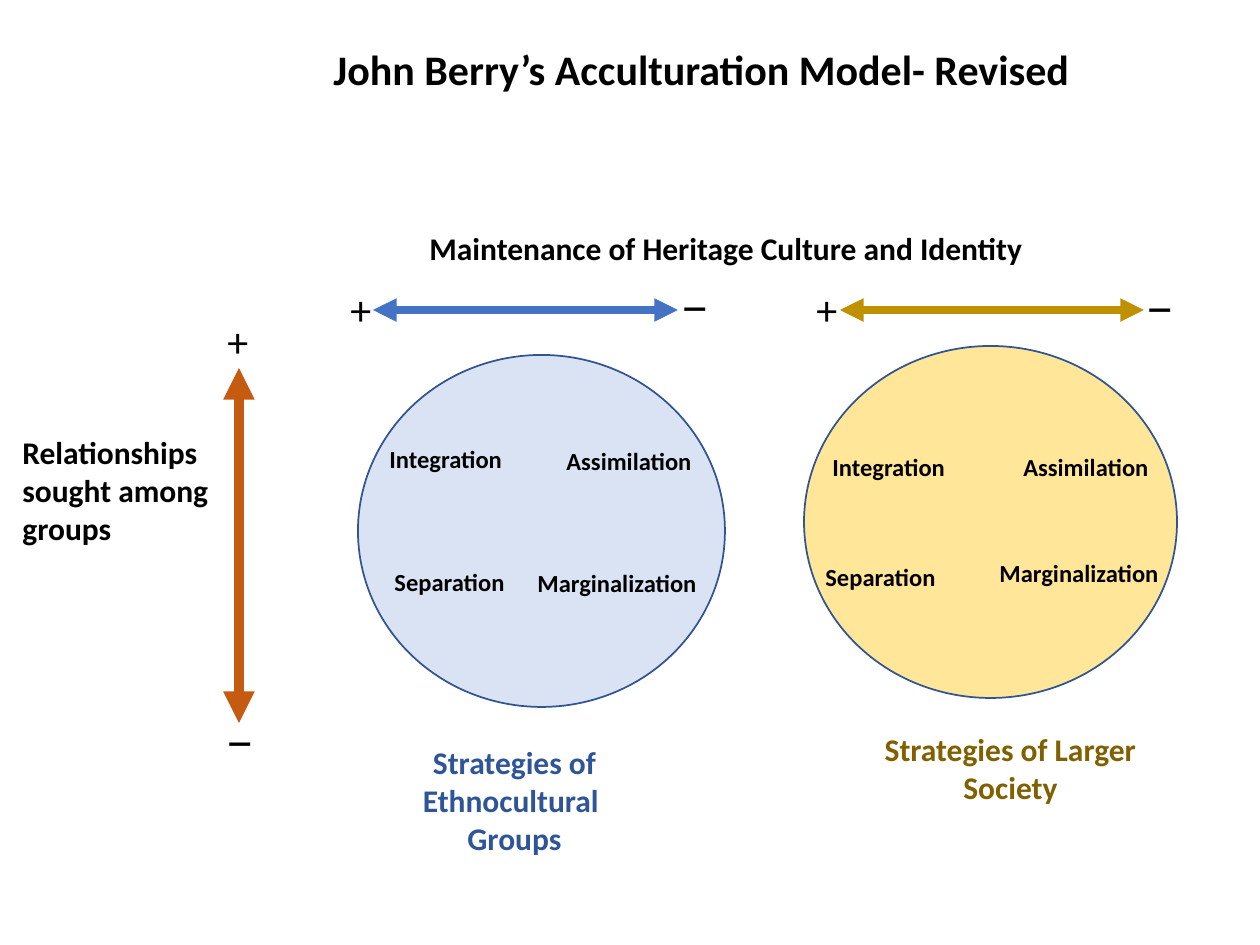
from dataclasses import dataclass

from lxml import etree
from pptx import Presentation
from pptx import util as u
from pptx.dml.color import RGBColor
from pptx.enum import shapes, text
from pptx.oxml.ns import qn

PX_PER_INCH = 126


@dataclass(frozen=True)
class Theme:
    font: str = "Calibri"
    ink: str = "000000"
    outline: str = "325491"
    relations: str = "C55A11"
    title_size: int = 24
    heading_size: int = 18
    label_size: int = 14


THEME = Theme()

# Boxes are (left, top, width, height) in px.
TITLE = ("John Berry’s Acculturation Model- Revised", (292, 37, 819, 63))
HEADINGS = [
    ("Maintenance of Heritage Culture and Identity", (417, 223, 630, 50)),
    ("Relationships sought among groups", (10, 427, 212, 127)),
]

# Each axis has its two ends, colour, width in points, and the corners of its signs.
RELATIONS_AXIS = ((239, 368), (239, 723), THEME.relations, 6, (215, 309), (217, 692))
SIGN_BOX = (62, 63)

LABEL_WIDTHS = {
    "Integration": 144,
    "Assimilation": 166,
    "Separation": 144,
    "Marginalization": 190,
}
LABEL_HEIGHT = 43

GROUPS = [
    {
        "circle": (358, 355, 367, 352),
        "fill": "DAE3F3",
        "axis": ((373, 310), (678, 310), "4472C4", 4.5, (338, 277), (672, 257)),
        "caption": ("Strategies of Ethnocultural \vGroups", (331, 737, 367, 127)),
        "caption_color": "2F5597",
        "label_corners": [(377, 438), (554, 440), (382, 561), (525, 562)],
    },
    {
        "circle": (804, 346, 373, 352),
        "fill": "FFE699",
        "axis": ((840, 310), (1144, 310), "BF9000", 4.5, (804, 277), (1137, 258)),
        "caption": ("Strategies of Larger Society", (827, 724, 367, 89)),
        "caption_color": "806000",
        "label_corners": [(820, 446), (1011, 446), (813, 556), (987, 552)],
    },
]


def px(*lengths):
    return [u.Inches(length / PX_PER_INCH) for length in lengths]


def rgb(color):
    return RGBColor.from_string(color)


def write(shape, words, size, color=THEME.ink, bold=True, centered=False):
    frame = shape.text_frame
    frame.text = words
    frame.word_wrap = True
    frame.auto_size = text.MSO_AUTO_SIZE.NONE
    frame.vertical_anchor = text.MSO_ANCHOR.TOP
    paragraph = frame.paragraphs[0]
    paragraph.alignment = text.PP_ALIGN.CENTER if centered else text.PP_ALIGN.LEFT
    for run in paragraph.runs:
        run.font.name = THEME.font
        run.font.size = u.Pt(size)
        run.font.bold = bold
        run.font.color.rgb = rgb(color)


def add_text(slide, words, box, size, **style):
    write(slide.shapes.add_textbox(*px(*box)), words, size, **style)


def add_title(slide):
    words, box = TITLE
    title = slide.shapes.title
    title.left, title.top, title.width, title.height = px(*box)
    write(title, words, THEME.title_size, centered=True)


def add_axis(slide, start, end, color, width, plus_corner, minus_corner):
    """Draw a double-headed arrow with a plus and a minus sign at its ends."""
    arrow = slide.shapes.add_connector(
        shapes.MSO_CONNECTOR.STRAIGHT, *px(*start, *end))
    arrow.line.color.rgb = rgb(color)
    arrow.line.width = u.Pt(width)
    line = arrow.line._get_or_add_ln()
    for end_name in ("a:headEnd", "a:tailEnd"):
        etree.SubElement(line, qn(end_name), type="triangle")
    etree.SubElement(arrow._element.spPr, qn("a:effectLst"))

    for sign, corner, bold in (("+", plus_corner, False), ("_", minus_corner, True)):
        add_text(slide, sign, corner + SIGN_BOX, THEME.title_size, bold=bold)


def add_group(slide, group):
    circle = slide.shapes.add_shape(
        shapes.MSO_SHAPE.OVAL, *px(*group["circle"]))
    circle.shadow.inherit = False
    circle.fill.solid()
    circle.fill.fore_color.rgb = rgb(group["fill"])
    circle.line.color.rgb = rgb(THEME.outline)
    circle.line.width = u.Pt(1)

    add_axis(slide, *group["axis"])
    add_text(slide, *group["caption"], THEME.heading_size,
             color=group["caption_color"], centered=True)
    for (label, width), corner in zip(LABEL_WIDTHS.items(), group["label_corners"]):
        add_text(slide, label, corner + (width, LABEL_HEIGHT), THEME.label_size)


def main():
    presentation = Presentation()
    presentation.slide_width, presentation.slide_height = px(1260, 945)
    slide = presentation.slides.add_slide(
        presentation.slide_layouts.get_by_name("Title Only"))
    add_title(slide)
    for words, box in HEADINGS:
        add_text(slide, words, box, THEME.heading_size)
    add_axis(slide, *RELATIONS_AXIS)
    for group in GROUPS:
        add_group(slide, group)
    presentation.save("out.pptx")


if __name__ == "__main__":
    main()
